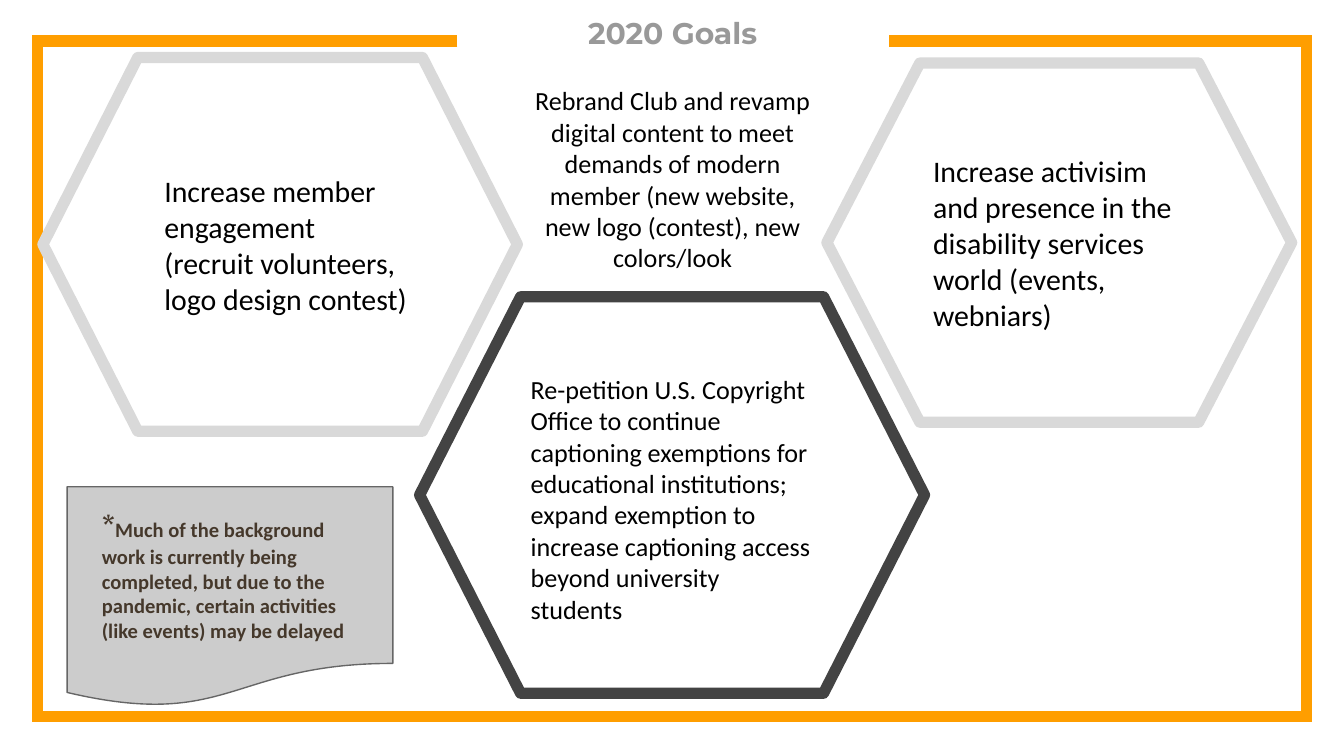
from lxml.etree import SubElement
from pptx import Presentation
from pptx.dml.color import RGBColor
from pptx.enum.shapes import MSO_SHAPE as Preset
from pptx.enum.text import MSO_ANCHOR as Anchor, MSO_AUTO_SIZE as AutoSize, PP_ALIGN as Align
from pptx.oxml.ns import qn
from pptx.util import Pt

ORANGE = RGBColor(0xFF, 0x9E, 0x00)
TITLE_GRAY = RGBColor(0x99, 0x99, 0x99)
NOTE_FILL = RGBColor(0xCC, 0xCC, 0xCC)
NOTE_LINE = RGBColor(0x66, 0x66, 0x66)
DARK = RGBColor(0x43, 0x43, 0x43)
LIGHT = RGBColor(0xD9, 0xD9, 0xD9)
BROWN = RGBColor(0x45, 0x38, 0x2B)
BLACK = RGBColor(0, 0, 0)

BORDER = [(244.8, 21.6), (20.2, 21.6), (20.2, 383.8), (699.8, 383.8), (699.8, 21.6), (475.9, 21.6)]

SHAPES = [
    dict(preset=Preset.FLOWCHART_DOCUMENT, at=(36, 260.8, 174.5, 118), fill=NOTE_FILL,
         line=NOTE_LINE, width=0.75),
    dict(preset=Preset.FLOWCHART_PREPARATION, at=(224.8, 159, 270.5, 212.4), line=DARK, width=6),
    dict(preset=Preset.FLOWCHART_PREPARATION, at=(443, 33.8, 249, 192.4), line=LIGHT, width=6,
         text="Increase activisim and presence in the disability services world (events, webniars)"),
    dict(preset=Preset.FLOWCHART_PREPARATION, at=(23, 30.8, 254.2, 200.2), line=LIGHT, width=6, indent=7.2,
         text="Increase member engagement (recruit volunteers, logo design contest)"),
]

TEXTS = [
    dict(at=(255.6, 0.7, 209.5, 57.6), align=Align.CENTER,
         runs=[("2020 Goals", "Montserrat", 16, TITLE_GRAY, True)]),
    dict(at=(47.5, 265, 152, 87.8),
         runs=[("*", "Cabin", 16, BROWN, True),
               ("Much of the background work is currently being completed, but due to the pandemic, "
                "certain activities (like events) may be delayed", "Calibri", 11, BROWN, True)]),
    dict(at=(277.2, 38.2, 166.3, 49), align=Align.CENTER,
         runs=[("Rebrand Club and revamp digital content to meet demands of modern member "
                "(new website, new logo (contest), new colors/look", "Calibri", 14, BLACK, False)]),
    dict(at=(277.2, 179.3, 166.3, 143.3), top=20.7, bottom=3.6, grow=True,
         runs=[("Re-petition U.S. Copyright Office to continue captioning exemptions for educational "
                "institutions; expand exemption to increase captioning access beyond university students",
                "Calibri", 14, BLACK, False)]),
]


def style_line(shape, color, width, join):
    shape.shadow.inherit = False
    shape.line.color.rgb = color
    shape.line.width = Pt(width)
    SubElement(shape.line._get_or_add_ln(), qn(f"a:{join}"))


def write(frame, runs, align=Align.LEFT, top=7.2, bottom=7.2):
    frame.word_wrap = True
    frame.margin_left = frame.margin_right = Pt(7.2)
    frame.margin_top, frame.margin_bottom = Pt(top), Pt(bottom)
    para = frame.paragraphs[0]
    para.alignment = align
    for words, font, size, color, bold in runs:
        span = para.add_run()
        span.text = words
        span.font.name = font
        span.font.size = Pt(size)
        span.font.bold = bold
        span.font.color.rgb = color
    return para


def add_border(page):
    builder = page.shapes.build_freeform(*BORDER[0], scale=Pt(1))
    builder.add_line_segments(BORDER[1:], close=False)
    border = builder.convert_to_shape()
    border.fill.background()
    style_line(border, ORANGE, 6, "miter")


def add_shape(page, item):
    shape = page.shapes.add_shape(item["preset"], *map(Pt, item["at"]))
    if "fill" in item:
        shape.fill.solid()
        shape.fill.fore_color.rgb = item["fill"]
    else:
        shape.fill.background()
    style_line(shape, item["line"], item["width"], "round")
    if "text" in item:
        shape.text_frame.vertical_anchor = Anchor.MIDDLE
        para = write(shape.text_frame, [(item["text"], "Calibri", 16, BLACK, False)])
        para.space_before = Pt(10)
        para._p.get_or_add_pPr().set("marL", str(Pt(item.get("indent", 0))))


def add_text(page, item):
    frame = page.shapes.add_textbox(*map(Pt, item["at"])).text_frame
    frame.vertical_anchor = Anchor.TOP
    write(frame, item["runs"], item.get("align", Align.LEFT), item.get("top", 7.2), item.get("bottom", 7.2))
    frame.auto_size = AutoSize.SHAPE_TO_FIT_TEXT if item.get("grow") else AutoSize.NONE


def main():
    deck = Presentation()
    deck.slide_width, deck.slide_height = Pt(720), Pt(405)
    page = deck.slides.add_slide(deck.slide_layouts[6])
    add_border(page)
    for item in SHAPES:
        add_shape(page, item)
    for item in TEXTS:
        add_text(page, item)
    deck.save("out.pptx")


if __name__ == "__main__":
    main()
